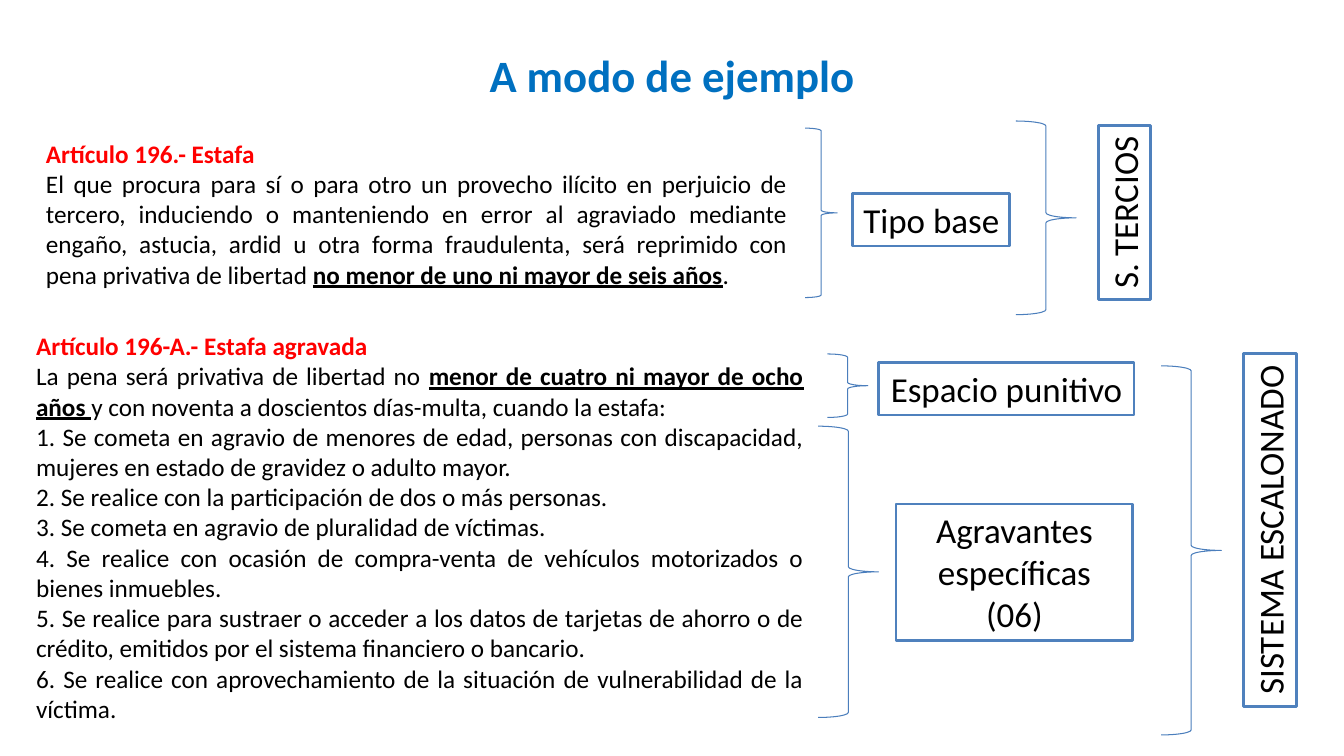
"""Build a slide that compares the penalty systems for two articles on fraud."""
from lxml.etree import SubElement
from pptx import Presentation
from pptx.dml.color import RGBColor
from pptx.enum.shapes import MSO_SHAPE as Preset
from pptx.enum.text import MSO_ANCHOR as Anchor, PP_ALIGN as Align
from pptx.oxml.ns import qn
from pptx.util import Cm, Pt

BLUE = RGBColor(0x00, 0x70, 0xC0)
RED = RGBColor(0xFF, 0x00, 0x00)
BLACK = RGBColor(0x00, 0x00, 0x00)
WHITE = RGBColor(0xFF, 0xFF, 0xFF)
BORDER = RGBColor(0x4F, 0x81, 0xBD)
BRACE = RGBColor(0x4B, 0x7E, 0xBC)

TITLE = ("A modo de ejemplo", (1.7, 0.3, 30.48, 3.18))

# Each paragraph alternates plain and emphasised pieces.
ARTICLES = [
    ((0.66, 8.2, 19.84, 10.26), "Artículo 196-A.- Estafa agravada", [
        ["La pena será privativa de libertad no ",
         "menor de cuatro ni mayor de ocho años ",
         "y con noventa a doscientos días-multa, cuando la estafa:"],
        ["1. Se cometa en agravio de menores de edad, personas con discapacidad, "
         "mujeres en estado de gravidez o adulto mayor."],
        ["2. Se realice con la participación de dos o más personas."],
        ["3. Se cometa en agravio de pluralidad de víctimas."],
        ["4. Se realice con ocasión de compra-venta de vehículos motorizados o "
         "bienes inmuebles."],
        ["5. Se realice para sustraer o acceder a los datos de tarjetas de ahorro o de "
         "crédito, emitidos por el sistema financiero o bancario."],
        ["6. Se realice con aprovechamiento de la situación de vulnerabilidad de la "
         "víctima."],
    ]),
    ((0.91, 3.35, 19.18, 4.11), "Artículo 196.- Estafa", [
        ["El que procura para sí o para otro un provecho ilícito en perjuicio de "
         "tercero, induciendo o manteniendo en error al agraviado mediante engaño, "
         "astucia, ardid u otra forma fraudulenta, será reprimido con pena privativa "
         "de libertad ",
         "no menor de uno ni mayor de seis años", "."],
    ]),
]

LABELS = [
    (["Tipo base"], (21.49, 4.88, 3.96, 1.32), 0),
    (["Espacio punitivo"], (22.15, 9.14, 6.43, 1.32), 0),
    (["Agravantes específicas", "(06)"], (22.58, 12.7, 5.97, 3.45), 0),
    (["SISTEMA ESCALONADO"], (27.56, 12.7, 8.89, 1.32), 270),
    (["S. TERCIOS"], (26.14, 4.7, 4.39, 1.32), 270),
]

BRACES = [
    (20.29, 3.23, 0.81, 4.27),
    (20.85, 8.92, 1.02, 1.6),
    (20.62, 10.74, 1.52, 7.34),
    (25.6, 3.05, 1.52, 4.88),
    (29.26, 9.22, 1.52, 9.3),
]


def add_run(paragraph, text, size=18, color=BLACK, bold=False, underline=False,
            highlight=None):
    run = paragraph.add_run()
    run.text = text
    font = run.font
    font.name, font.size, font.bold, font.underline = "Calibri", Pt(size), bold, underline
    font.color.rgb = color
    if highlight:
        mark = SubElement(font._element, qn("a:highlight"))
        SubElement(mark, qn("a:srgbClr"), val=str(highlight))
        font._element.find(qn("a:solidFill")).addnext(mark)


def add_preset(shapes, preset, box, fill=None, line=None, width=0.75):
    shape = shapes.add_shape(preset, *map(Cm, box))
    shape.shadow.inherit = False
    if fill:
        shape.fill.solid()
        shape.fill.fore_color.rgb = fill
    else:
        shape.fill.background()
    if line:
        shape.line.color.rgb = line
        shape.line.width = Pt(width)
    else:
        shape.line.fill.background()
    return shape


def add_paragraphs(frame, paragraphs, align, anchor, wrap=True):
    frame.word_wrap = wrap
    frame.vertical_anchor = anchor
    for index, pieces in enumerate(paragraphs):
        paragraph = frame.add_paragraph() if index else frame.paragraphs[0]
        paragraph.alignment = align
        for text, style in pieces:
            add_run(paragraph, text, **style)


def main():
    presentation = Presentation()
    presentation.slide_width, presentation.slide_height = Cm(33.87), Cm(19.05)
    slide = presentation.slides.add_slide(presentation.slide_layouts[6])
    shapes = slide.shapes

    text, box = TITLE
    title = shapes.add_textbox(*map(Cm, box))
    title_style = dict(size=32, color=BLUE, bold=True)
    add_paragraphs(title.text_frame, [[(text, title_style)]], Align.CENTER, Anchor.MIDDLE)

    for box, heading, body in ARTICLES:
        shape = add_preset(shapes, Preset.RECTANGLE, box, fill=WHITE)
        paragraphs = [[(heading, dict(color=RED, bold=True, highlight=WHITE))]]
        for pieces in body:
            paragraphs.append([
                (piece, dict(bold=index % 2 == 1, underline=index % 2 == 1, highlight=WHITE))
                for index, piece in enumerate(pieces)])
        add_paragraphs(shape.text_frame, paragraphs, Align.JUSTIFY, Anchor.TOP)

    for box in BRACES:
        add_preset(shapes, Preset.RIGHT_BRACE, box, line=BRACE)

    for lines, box, rotation in LABELS:
        shape = add_preset(shapes, Preset.RECTANGLE, box, fill=WHITE, line=BORDER, width=2)
        shape.rotation = rotation
        add_paragraphs(shape.text_frame, [[(line, dict(size=25))] for line in lines],
                       Align.CENTER, Anchor.TOP, wrap=len(lines) > 1)

    presentation.save("out.pptx")


if __name__ == "__main__":
    main()
